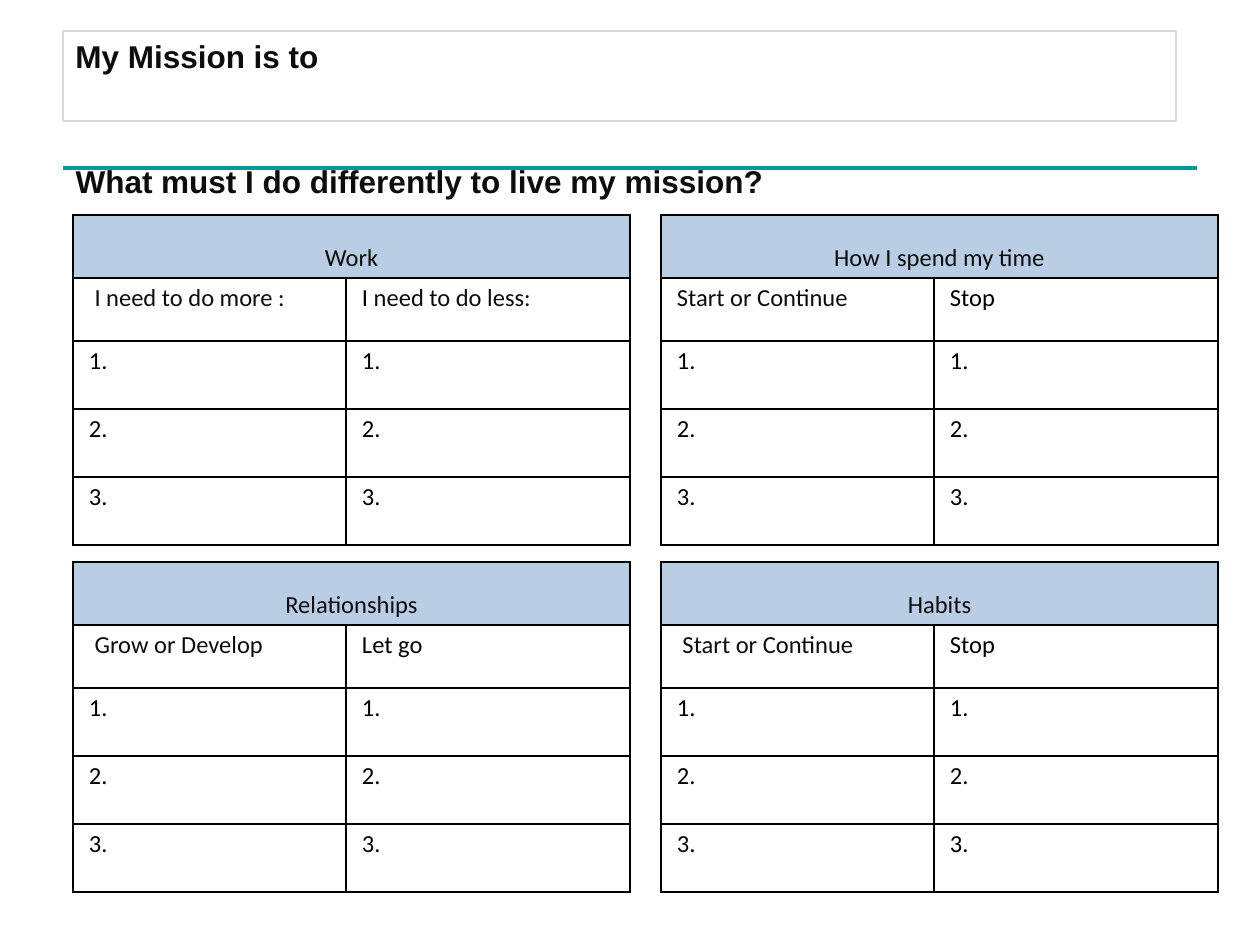
import dataclasses
import typing

import pptx
import pptx.dml.color
import pptx.enum.shapes
import pptx.enum.text
import pptx.oxml
import pptx.oxml.ns
import pptx.util

EMU_PER_PX = 914400 / 126
INK = "0D0D0D"
BLACK = "000000"
HEADER_FILL = "B9CDE5"
COLUMN_WIDTHS = (273, 284)
ROW_HEIGHTS = (63, 63, 68, 68, 68)
TABLE_LEFTS = (73, 661)
TABLE_TOPS = (215, 562)
ANCHOR = pptx.enum.text.MSO_ANCHOR
ALIGN = pptx.enum.text.PP_ALIGN


@dataclasses.dataclass(frozen=True)
class Span:
    text: str
    color: str = INK


@dataclasses.dataclass(frozen=True)
class Panel:
    title: str
    left: str
    right: tuple[Span, ...]


PANELS = (
    Panel("Work", " I need to do more :", (Span("I", BLACK), Span(" need to do less:"))),
    Panel("How I spend my time", "Start or Continue", (Span("Stop", BLACK),)),
    Panel("Relationships", " Grow or Develop", (Span("Let go", BLACK),)),
    Panel("Habits", " Start or Continue", (Span("Stop", BLACK),)),
)


def px(length: int) -> int:
    return round(length * EMU_PER_PX)


def rgb(color: str) -> pptx.dml.color.RGBColor:
    return pptx.dml.color.RGBColor.from_string(color)


def apply(target: typing.Any, formats: dict[str, typing.Any]) -> None:
    for name, value in formats.items():
        setattr(target, name, value)


def write(frame: typing.Any, spans: tuple[Span, ...], font: dict[str, typing.Any],
          alignment: typing.Any = ALIGN.LEFT) -> None:
    para = frame.paragraphs[0]
    para.alignment = alignment
    for item in spans:
        span = para.add_run()
        span.text = item.text
        apply(span.font, font)
        span.font.color.rgb = rgb(item.color)


def write_heading(box: typing.Any, text: str, frame_formats: dict[str, typing.Any]) -> None:
    apply(box.text_frame, {"word_wrap": True, **frame_formats})
    font = {"name": "Arial", "size": pptx.util.Pt(18), "bold": True}
    write(box.text_frame, (Span(text),), font)


def add_borders(cell: typing.Any) -> None:
    properties = cell._tc.get_or_add_tcPr()
    for side in "LRTB":
        properties.append(pptx.oxml.parse_xml(
            f'<a:ln{side} {pptx.oxml.ns.nsdecls("a")} w="12700"><a:solidFill>'
            f'<a:srgbClr val="{BLACK}"/></a:solidFill></a:ln{side}>'
        ))


def fill_cell(cell: typing.Any, spans: tuple[Span, ...], header: bool) -> None:
    apply(cell, {
        "margin_left": px(16), "margin_right": px(16),
        "margin_top": px(5), "margin_bottom": px(5),
        "vertical_anchor": ANCHOR.BOTTOM if header else ANCHOR.TOP,
    })
    add_borders(cell)
    if header:
        cell.fill.solid()
        cell.fill.fore_color.rgb = rgb(HEADER_FILL)
    else:
        cell.fill.background()
    font = {"name": "Calibri", "size": pptx.util.Pt(14), "bold": False}
    write(cell.text_frame, spans, font, ALIGN.CENTER if header else ALIGN.LEFT)


def add_panel(page: typing.Any, panel: Panel, left: int, top: int) -> None:
    table = page.shapes.add_table(
        len(ROW_HEIGHTS), len(COLUMN_WIDTHS), px(left), px(top),
        px(sum(COLUMN_WIDTHS)), px(sum(ROW_HEIGHTS)),
    ).table
    apply(table, {"first_row": False, "horz_banding": False})
    for column, width in zip(table.columns, COLUMN_WIDTHS):
        column.width = px(width)
    for row, height in zip(table.rows, ROW_HEIGHTS):
        row.height = px(height)
    table.cell(0, 0).merge(table.cell(0, 1))
    numbers = [((Span(f"{number}.", BLACK),),) * 2 for number in range(1, 4)]
    rows = [((Span(panel.title),), ()), ((Span(panel.left),), panel.right), *numbers]
    for row_index, row_spans in enumerate(rows):
        for column_index, spans in enumerate(row_spans):
            fill_cell(table.cell(row_index, column_index), spans, row_index == 0)


def add_rule(page: typing.Any) -> None:
    rule = page.shapes.add_connector(
        pptx.enum.shapes.MSO_CONNECTOR.STRAIGHT, px(63), px(168), px(1197), px(168)
    )
    rule.line.color.rgb = rgb("009999")
    rule.line.width = pptx.util.Pt(2.25)
    properties = rule._element.spPr
    properties.append(properties.makeelement(pptx.oxml.ns.qn("a:effectLst"), {}))
    page.shapes._spTree.insert(2, rule._element)


def add_mission_box(page: typing.Any) -> None:
    box = page.shapes.add_shape(
        pptx.enum.shapes.MSO_SHAPE.RECTANGLE, px(63), px(31), px(1113), px(90)
    )
    box.shadow.inherit = False
    box.fill.background()
    box.line.color.rgb = rgb("D9D9D9")
    box.line.width = pptx.util.Pt(0.75)
    write_heading(box, "My Mission is to", {"vertical_anchor": ANCHOR.TOP})


def place_question(page: typing.Any) -> None:
    box = page.shapes.title
    apply(box, {"left": px(63), "top": px(77), "width": px(1113), "height": px(165)})
    write_heading(box, "What must I do differently to live my mission?", {
        "vertical_anchor": ANCHOR.MIDDLE, "margin_top": px(48), "margin_bottom": px(6),
        "auto_size": pptx.enum.text.MSO_AUTO_SIZE.NONE,
    })


def main() -> None:
    deck = pptx.Presentation()
    apply(deck, {"slide_width": px(1260), "slide_height": px(945)})
    page = deck.slides.add_slide(deck.slide_layouts[5])
    place_question(page)
    add_rule(page)
    add_mission_box(page)
    positions = [(left, top) for top in TABLE_TOPS for left in TABLE_LEFTS]
    for panel, (left, top) in zip(PANELS, positions):
        add_panel(page, panel, left, top)
    deck.save("out.pptx")


if __name__ == "__main__":
    main()
